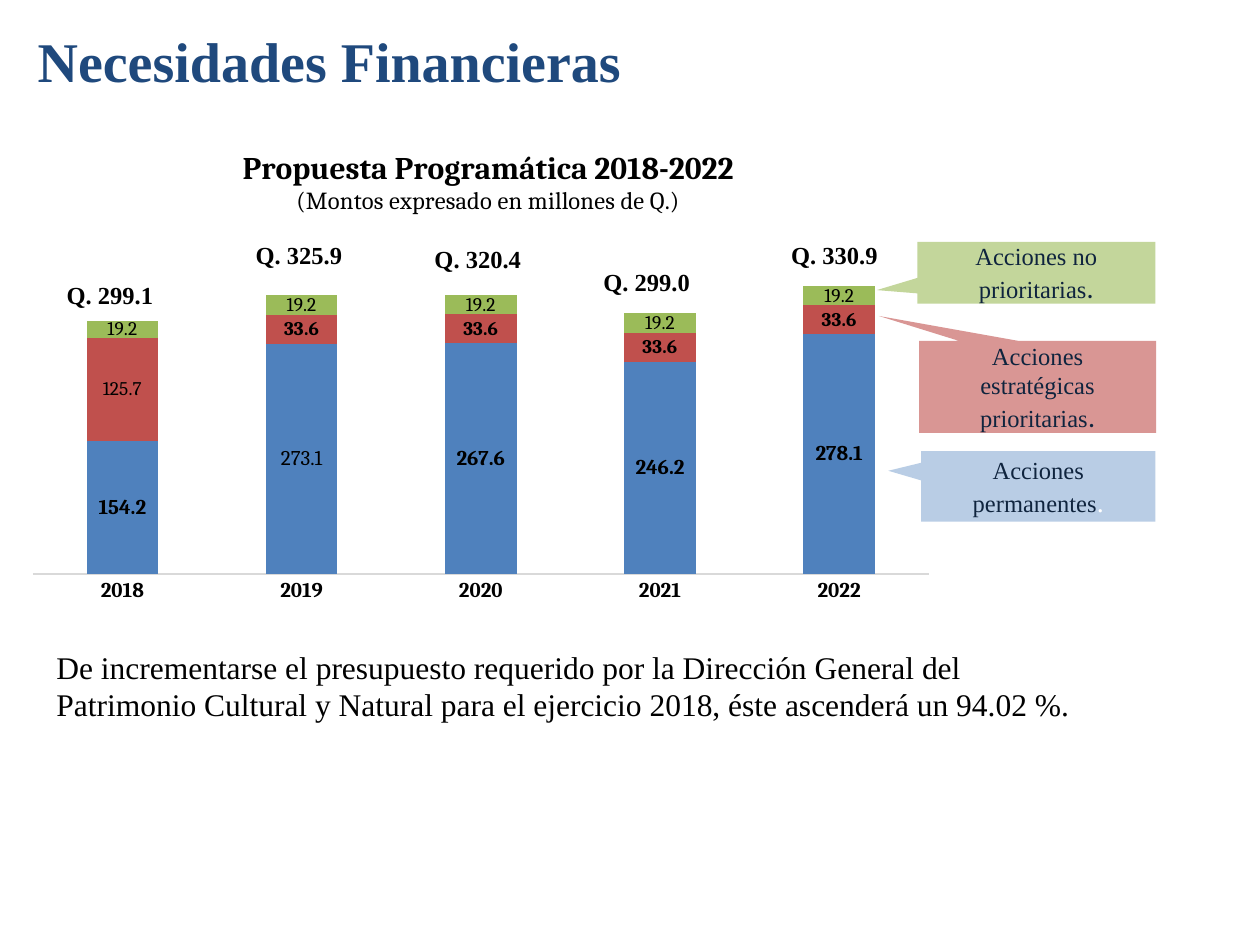
"""Builds the financial needs slide with its stacked chart and callouts."""
from typing import NamedTuple

from pptx import Presentation
from pptx.chart.data import CategoryChartData
from pptx.dml.color import RGBColor
from pptx.enum.chart import XL_CHART_TYPE, XL_TICK_MARK
from pptx.enum.shapes import MSO_SHAPE
from pptx.enum.text import MSO_ANCHOR, PP_ALIGN
from pptx.oxml import parse_xml
from pptx.oxml.ns import nsdecls, qn
from pptx.util import Inches, Pt

SERIF = "Times New Roman"
CHART = "Cambria"
NAVY = "0F243E"


class Run(NamedTuple):
    """A piece of text with its look."""
    text: str
    size: float
    color: str = "000000"
    bold: bool = False
    face: str = SERIF


class Box(NamedTuple):
    """A text box and its one run."""
    place: tuple
    run: Run
    anchor: MSO_ANCHOR = MSO_ANCHOR.TOP


class Callout(NamedTuple):
    """A callout turned a quarter, with its pointer and runs."""
    place: tuple
    point: tuple
    fill: str
    runs: tuple


class Series(NamedTuple):
    """A chart series with label size and custom labels by point."""
    name: str
    vals: tuple
    color: str
    size: float
    custom: dict


def total(left: float, top: float, text: str) -> Box:
    """Return the box of a yearly total."""
    return Box((left, top, 0.94, 0.34), Run(text, 14, bold=True))


BOXES = (
    Box((0.2, -0.11, 5.91, 1.18),
        Run("Necesidades Financieras", 32, "1F497D", True), MSO_ANCHOR.MIDDLE),
    Box((0.35, 5.09, 8.37, 0.71),
        Run("De incrementarse el presupuesto requerido por la Dirección General "
            "del Patrimonio Cultural y Natural para el ejercicio 2018, éste "
            "ascenderá un 94.02 %.", 18)),
    total(6.18, 1.86, "Q. 330.9"),
    total(0.43, 2.17, "Q. 299.1"),
    total(1.93, 1.86, "Q. 325.9"),
    total(3.35, 1.89, "Q. 320.4"),
    total(4.69, 2.07, "Q. 299.0"),
)
CALLOUTS = (
    Callout((7.87, 2.13, 0.73, 1.88), (-0.77, 0.67), "D99694",
            (Run("Acciones estratégicas prioritarias", 14, NAVY),
             Run(".", 16, NAVY, face="Calibri"))),
    Callout((7.96, 2.93, 0.56, 1.86), (-0.22, 0.64), "B9CDE5",
            (Run("Acciones permanentes", 14, NAVY), Run(".", 16, "FFFFFF"))),
    Callout((7.98, 1.22, 0.49, 1.89), (0.28, 0.67), "C3D69B",
            (Run("Acciones no prioritarias", 14, NAVY),
             Run(".", 16, NAVY, face="Calibri"))),
)
YEARS = ("2018", "2019", "2020", "2021", "2022")
SERIES = (
    Series("Series 1", (154.2, 267.2, 267.6, 246.2, 278.1), "4F81BD", 12,
           {1: "273.1"}),
    Series("Series 2", (119.8, 33.6, 33.6, 33.6, 33.6), "C0504D", 11,
           {0: "125.7"}),
    Series("Series 3", (19.3, 22.6, 22.6, 22.6, 22.6), "9BBB59", 11,
           dict.fromkeys(range(5), "19.2")),
)
TITLE = (
    Run("Propuesta Programática 2018-2022", 18, bold=True, face=CHART),
    Run("(Montos expresado en millones de Q.)", 14, face=CHART),
)


def tint(color: str) -> RGBColor:
    """Turn a hex string into a colour."""
    return RGBColor.from_string(color)


def style(font, size: float, color: str, bold: bool, face: str) -> None:
    """Set the look of a font."""
    font.size, font.bold, font.name = Pt(size), bold, face
    font.color.rgb = tint(color)


def write(para, run: Run) -> None:
    """Add one run to a paragraph."""
    part = para.add_run()
    part.text = run.text
    style(part.font, run.size, run.color, run.bold, run.face)


def draw_box(slide, box: Box) -> None:
    """Draw a text box."""
    frame = slide.shapes.add_textbox(*map(Inches, box.place)).text_frame
    frame.word_wrap = True
    frame.vertical_anchor = box.anchor
    write(frame.paragraphs[0], box.run)


def draw_callout(slide, item: Callout) -> None:
    """Draw a turned callout whose text stays level."""
    shape = slide.shapes.add_shape(MSO_SHAPE.RECTANGULAR_CALLOUT,
                                   *map(Inches, item.place))
    shape.rotation = 90
    shape.shadow.inherit = False
    shape.adjustments[0], shape.adjustments[1] = item.point
    shape.fill.solid()
    shape.fill.fore_color.rgb = tint(item.fill)
    shape.line.fill.background()
    frame = shape.text_frame
    frame.word_wrap = True
    frame.vertical_anchor = MSO_ANCHOR.MIDDLE
    frame._txBody.find(qn("a:bodyPr")).set("vert", "vert270")
    para = frame.paragraphs[0]
    para.alignment = PP_ALIGN.CENTER
    for run in item.runs:
        write(para, run)


def lay_out(node, index: int, target: str, **spots: float) -> None:
    """Place a chart part by shares of the chart frame."""
    for old in node.findall(qn("c:layout")):
        node.remove(old)
    inner = f'<c:layoutTarget val="{target}"/>' if target else ""
    modes = "".join(f'<c:{key}Mode val="edge"/>' for key in "xy")
    sizes = "".join(f'<c:{key} val="{val}"/>' for key, val in spots.items())
    node.insert(index, parse_xml(
        f'<c:layout {nsdecls("c")}><c:manualLayout>{inner}{modes}{sizes}'
        "</c:manualLayout></c:layout>"))


def paint(plot, item: Series) -> None:
    """Colour a series and set its labels."""
    series = plot.series[SERIES.index(item)]
    series.format.fill.solid()
    series.format.fill.fore_color.rgb = tint(item.color)
    labels = series.data_labels
    labels.show_value = True
    labels.number_format, labels.number_format_is_linked = "0.0", False
    style(labels.font, item.size, "000000", True, CHART)
    for index, text in item.custom.items():
        frame = series.points[index].data_label.text_frame
        write(frame.paragraphs[0], Run(text, item.size, face=CHART))


def draw_chart(slide) -> None:
    """Draw the stacked column chart."""
    data = CategoryChartData(number_format="0.0")
    data.categories = YEARS
    for item in SERIES:
        data.add_series(item.name, item.vals)
    place = map(Inches, (0.12, 0.99, 7.4, 3.87))
    chart = slide.shapes.add_chart(XL_CHART_TYPE.COLUMN_STACKED, *place, data).chart
    style(chart.font, 10, "000000", False, CHART)
    chart.has_legend = False
    frame = chart.chart_title.text_frame
    write(frame.paragraphs[0], TITLE[0])
    write(frame.add_paragraph(), TITLE[1])
    lay_out(chart.chart_title._element, 1, "", x=0.24, y=0.04)
    lay_out(chart._chartSpace.chart.plotArea, 0, "inner",
            x=0.019, y=0.214, w=0.961, h=0.708)
    scale = chart.value_axis
    scale.minimum_scale, scale.maximum_scale = 0, 400
    scale.has_major_gridlines = False
    scale.visible = False
    axis = chart.category_axis
    axis.major_tick_mark = XL_TICK_MARK.NONE
    axis.format.line.color.rgb = tint("D9D9D9")
    axis.format.line.width = Pt(0.75)
    style(axis.tick_labels.font, 12, "000000", True, CHART)
    plot = chart.plots[0]
    plot.gap_width, plot.overlap, plot.vary_by_categories = 150, 100, False
    for item in SERIES:
        paint(plot, item)


def main() -> None:
    """Build and save the slide."""
    deck = Presentation()
    deck.slide_width, deck.slide_height = Inches(10), Inches(7.5)
    slide = deck.slides.add_slide(deck.slide_layouts[6])
    for box in BOXES:
        draw_box(slide, box)
    draw_chart(slide)
    for item in CALLOUTS:
        draw_callout(slide, item)
    deck.save("out.pptx")


if __name__ == "__main__":
    main()
